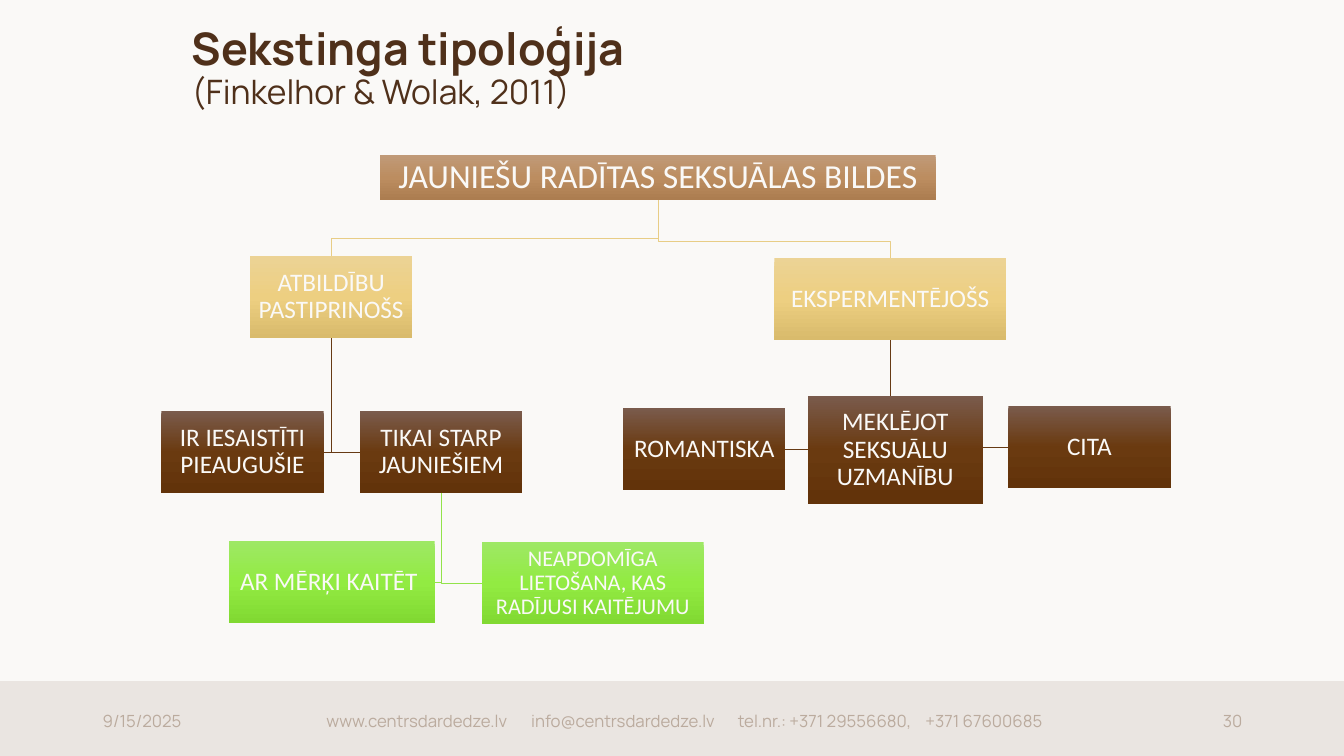
from copy import deepcopy
from pptx import Presentation
from pptx.dml.color import RGBColor
from pptx.enum.shapes import MSO_SHAPE
from pptx.enum.text import MSO_ANCHOR, MSO_AUTO_SIZE, PP_ALIGN
from pptx.oxml import parse_xml
from pptx.oxml.ns import nsdecls, qn
from pptx.util import Inches, Pt

PAPER = RGBColor(0xFA, 0xF9, 0xF7)
BAND = RGBColor(0xEA, 0xE5, 0xE1)
BROWN = RGBColor(0x4F, 0x30, 0x1A)
MUTED = RGBColor(0xBB, 0xAB, 0x9E)
GOLD_LINE = RGBColor(0xE8, 0xCD, 0x86)
BROWN_LINE = RGBColor(0x66, 0x3A, 0x14)
GREEN_LINE = RGBColor(0x92, 0xE3, 0x4A)
TAN = RGBColor(0xC0, 0x9A, 0x78), RGBColor(0xBC, 0x8D, 0x60), RGBColor(0xAC, 0x7D, 0x50)
GOLD = RGBColor(0xEC, 0xD3, 0x95), RGBColor(0xED, 0xCF, 0x81), RGBColor(0xD9, 0xBB, 0x6C)
DARK = RGBColor(0x7A, 0x5B, 0x4C), RGBColor(0x6A, 0x3A, 0x10), RGBColor(0x62, 0x33, 0x0A)
GREEN = RGBColor(0x9E, 0xE8, 0x65), RGBColor(0x92, 0xEB, 0x42), RGBColor(0x81, 0xD9, 0x32)

NODE_W, NODE_H = 1.61, 0.81
NODES = {
    "root": ("JAUNIEŠU RADĪTAS SEKSUĀLAS BILDES", (3.77, 1.54, 5.51, 0.44), TAN, 24),
    "aggravated": ("ATBILDĪBU PASTIPRINOŠS", (2.48, 2.54, NODE_W, NODE_H), GOLD, 18),
    "experimental": ("EKSPERMENTĒJOŠS", (7.68, 2.56, 2.3, NODE_H), GOLD, 18),
    "adults": ("IR IESAISTĪTI PIEAUGUŠIE", (1.6, 4.08, NODE_W, NODE_H), DARK, 18),
    "youth": ("TIKAI STARP JAUNIEŠIEM", (3.57, 4.08, NODE_W, NODE_H), DARK, 18),
    "romantic": ("ROMANTISKA", (6.18, 4.05, NODE_W, NODE_H), DARK, 18),
    "attention": ("MEKLĒJOT SEKSUĀLU UZMANĪBU", (8.01, 3.93, 1.74, 1.07), DARK, 18),
    "other": ("CITA", (10, 4.03, NODE_W, NODE_H), DARK, 18),
    "harm": ("AR MĒRĶI KAITĒT ", (2.27, 5.37, 2.04, NODE_H), GREEN, 18),
    "reckless": ("NEAPDOMĪGA LIETOŠANA, KAS RADĪJUSI KAITĒJUMU",
                 (4.78, 5.38, 2.2, NODE_H), GREEN, 16),
}
BRANCHES = [("root", "aggravated"), ("root", "experimental")]
HANGING = [
    ("aggravated", "adults", BROWN_LINE), ("aggravated", "youth", BROWN_LINE),
    ("experimental", "romantic", BROWN_LINE), ("experimental", "other", BROWN_LINE),
    ("youth", "harm", GREEN_LINE), ("youth", "reckless", GREEN_LINE),
]


def add_run(p, text, size, color, name="Manrope", bold=False):
    r = p.add_run()
    r.text = text
    r.font.size = Pt(size)
    r.font.name = name
    r.font.bold = bold
    r.font.color.rgb = color


def add_title(s, box):
    sp = s.shapes.title
    sp.left, sp.top, sp.width, sp.height = map(Inches, box)
    tf = sp.text_frame
    tf.auto_size = MSO_AUTO_SIZE.NONE
    tf.vertical_anchor = MSO_ANCHOR.TOP
    p = tf.paragraphs[0]
    p.alignment = PP_ALIGN.LEFT
    p.line_spacing = 0.9
    add_run(p, "Sekstinga tipoloģija", 32, BROWN, bold=True)
    p.add_line_break()
    add_run(p, "(Finkelhor & Wolak, 2011)", 24, BROWN)


def add_footer_text(s, box, text, align, tabs=()):
    sp = s.shapes.add_textbox(*map(Inches, box))
    tf = sp.text_frame
    tf.word_wrap = True
    tf.vertical_anchor = MSO_ANCHOR.MIDDLE
    p = tf.paragraphs[0]
    p.alignment = align
    if tabs:
        stops = "".join(f'<a:tab pos="{Inches(t)}" algn="l"/>' for t in tabs)
        p._p.get_or_add_pPr().append(
            parse_xml(f'<a:tabLst {nsdecls("a")}>{stops}</a:tabLst>'))
    add_run(p, text, 12, MUTED)


def add_footer(s, box):
    x, y, w, h = box
    sp = s.shapes.add_shape(MSO_SHAPE.RECTANGLE, *map(Inches, box))
    sp.shadow.inherit = False
    sp.fill.solid()
    sp.fill.fore_color.rgb = BAND
    sp.line.color.rgb = BAND
    sp.line.width = Pt(1)
    top = y + 0.19
    add_footer_text(s, (x + 0.92, top, 1.53, 0.4), "9/15/2025", PP_ALIGN.LEFT)
    contacts = ["www.centrsdardedze.lv", "info@centrsdardedze.lv",
                "tel.nr.: +371 29556680,", "+371 67600685"]
    add_footer_text(s, (x + 3.14, top, 7.5, 0.4), "\t".join(contacts),
                    PP_ALIGN.LEFT, (2.03, 4.08, 5.94))
    add_footer_text(s, (x + 10.89, top, 1.53, 0.4), "30", PP_ALIGN.RIGHT)


def add_polyline(s, points, color):
    pts = [(Inches(x), Inches(y)) for x, y in points]
    fb = s.shapes.build_freeform(*pts[0])
    fb.add_line_segments(pts[1:], close=False)
    sp = fb.convert_to_shape()
    sp.shadow.inherit = False
    sp.fill.background()
    sp.line.color.rgb = color
    sp.line.width = Pt(0.5)


def bottom_center(box):
    x, y, w, h = box
    return x + w / 2, y + h


def add_branch(s, parent, child):
    x, y = bottom_center(parent)
    end = child[0] + child[2] / 2
    bend = child[1] - 0.17
    add_polyline(s, [(x, y), (x, bend), (end, bend), (end, child[1])], GOLD_LINE)


def add_hanging(s, parent, child, color):
    x, y = bottom_center(parent)
    left, top, w, h = child
    side = left if left > x else left + w
    middle = top + h / 2
    add_polyline(s, [(x, y), (x, middle), (side, middle)], color)


def add_node(s, text, box, shades, size):
    sp = s.shapes.add_shape(MSO_SHAPE.RECTANGLE, *map(Inches, box))
    sp.shadow.inherit = False
    sp.line.fill.background()
    sp.fill.gradient()
    sp.fill.gradient_angle = 270
    stops = sp._element.spPr.find(qn("a:gradFill")).find(qn("a:gsLst"))
    stops.append(deepcopy(stops[0]))
    for i, (stop, shade) in enumerate(zip(sp.fill.gradient_stops, shades)):
        stop.position = i / 2
        stop.color.rgb = shade
    tf = sp.text_frame
    tf.word_wrap = True
    tf.vertical_anchor = MSO_ANCHOR.MIDDLE
    tf.margin_left = tf.margin_right = tf.margin_top = tf.margin_bottom = Inches(0.01)
    p = tf.paragraphs[0]
    p.alignment = PP_ALIGN.CENTER
    p.line_spacing = 0.9
    add_run(p, text, size, PAPER, "Calibri")


def add_tree(s):
    boxes = {key: node[1] for key, node in NODES.items()}
    for parent, child in BRANCHES:
        add_branch(s, boxes[parent], boxes[child])
    for parent, child, color in HANGING:
        add_hanging(s, boxes[parent], boxes[child], color)
    for node in NODES.values():
        add_node(s, *node)


def main():
    prs = Presentation()
    prs.slide_width, prs.slide_height = Inches(13.33), Inches(7.5)
    s = prs.slides.add_slide(prs.slide_layouts[5])
    s.background.fill.solid()
    s.background.fill.fore_color.rgb = PAPER
    add_footer(s, (0, 6.76, 13.33, 0.74))
    add_title(s, (1.8, 0.22, 10.79, 1.39))
    add_tree(s)
    prs.save("out.pptx")


if __name__ == "__main__":
    main()
